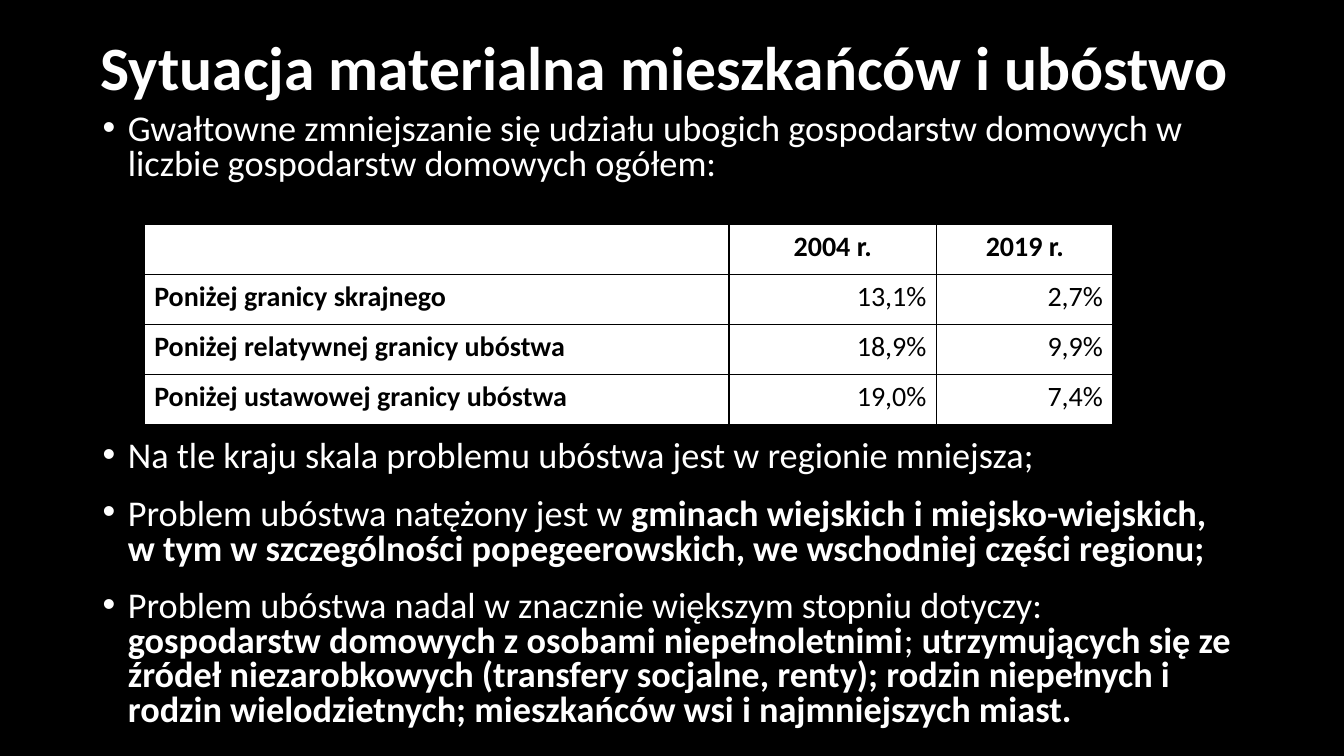
from collections import namedtuple

from lxml.etree import SubElement
from pptx import Presentation
from pptx.dml.color import RGBColor
from pptx.enum.text import MSO_ANCHOR, PP_ALIGN
from pptx.oxml.ns import qn
from pptx.util import Pt

Box = namedtuple("Box", "left top width height")

EMU_PER_PX = 9144
THEME = {
    "font": "Calibri",
    "dark": RGBColor(0, 0, 0),
    "light": RGBColor(255, 255, 255),
    "title_size": 44,
    "body_size": 25.9,
    "table_size": 20,
}
TITLE = "Sytuacja materialna mieszkańców i ubóstwo"
TABLE_GAP = 184
BULLETS = [
    ({"space_before": Pt(10)}, [
        ("Gwałtowne zmniejszanie się udziału ubogich gospodarstw domowych w "
         "liczbie gospodarstw domowych ogółem:", False),
    ]),
    ({"space_before": Pt(TABLE_GAP), "space_after": Pt(6)}, [
        ("Na tle kraju skala problemu ubóstwa jest w regionie mniejsza;", False),
    ]),
    ({"space_before": Pt(10), "space_after": Pt(6)}, [
        ("Problem ubóstwa natężony jest w", False),
        (" gminach wiejskich i miejsko-wiejskich, w tym w szczególności "
         "popegeerowskich, we wschodniej części regionu;", True),
    ]),
    ({"space_before": Pt(10), "space_after": Pt(6)}, [
        ("Problem ubóstwa nadal w znacznie większym stopniu dotyczy: ", False),
        ("gospodarstw domowych z osobami niepełnoletnimi", True),
        ("; ", False),
        ("utrzymujących się ze źródeł niezarobkowych (transfery socjalne, renty); "
         "rodzin niepełnych i rodzin wielodzietnych; "
         "mieszkańców wsi i najmniejszych miast.", True),
    ]),
]
COLUMN_WIDTHS = [580, 206, 175]
POVERTY_ROWS = [
    ["", "2004 r.", "2019 r."],
    ["Poniżej granicy skrajnego", "13,1%", "2,7%"],
    ["Poniżej relatywnej granicy ubóstwa", "18,9%", "9,9%"],
    ["Poniżej ustawowej granicy ubóstwa", "19,0%", "7,4%"],
]


def px(length):
    return length * EMU_PER_PX


def apply_format(target, values):
    for name, value in values.items():
        setattr(target, name, value)


def add_run(paragraph, text, size, color, bold):
    run = paragraph.add_run()
    run.text = text
    apply_format(run.font, {"name": THEME["font"], "size": Pt(size), "bold": bold})
    run.font.color.rgb = color


def add_text_frame(slide, box, anchor):
    frame = slide.shapes.add_textbox(*map(px, box)).text_frame
    apply_format(frame, {"word_wrap": True, "vertical_anchor": anchor})
    return frame


def add_title(slide, box):
    paragraph = add_text_frame(slide, box, MSO_ANCHOR.MIDDLE).paragraphs[0]
    paragraph.line_spacing = 0.9
    add_run(paragraph, TITLE, THEME["title_size"], THEME["light"], True)


def set_bullet(paragraph, indent):
    properties = paragraph._p.get_or_add_pPr()
    properties.set("marL", str(px(indent)))
    properties.set("indent", str(-px(indent)))
    SubElement(properties, qn("a:buFont")).set("typeface", "Arial")
    SubElement(properties, qn("a:buChar")).set("char", "•")


def add_bullets(slide, box):
    frame = add_text_frame(slide, box, MSO_ANCHOR.TOP)
    for index, (spacing, runs) in enumerate(BULLETS):
        paragraph = frame.add_paragraph() if index else frame.paragraphs[0]
        apply_format(paragraph, {"line_spacing": 0.8, **spacing})
        set_bullet(paragraph, 25)
        for text, bold in runs:
            add_run(paragraph, text, THEME["body_size"], THEME["light"], bold)


def set_borders(cell):
    properties = cell._tc.get_or_add_tcPr()
    for position, side in enumerate(("a:lnL", "a:lnR", "a:lnT", "a:lnB")):
        line = properties.makeelement(qn(side), {"w": str(Pt(1))})
        fill = SubElement(line, qn("a:solidFill"))
        SubElement(fill, qn("a:srgbClr")).set("val", str(THEME["dark"]))
        properties.insert(position, line)


def add_poverty_table(slide, box):
    table = slide.shapes.add_table(
        len(POVERTY_ROWS), len(COLUMN_WIDTHS), *map(px, box)).table
    for column, width in zip(table.columns, COLUMN_WIDTHS):
        column.width = px(width)
    for row_index, values in enumerate(POVERTY_ROWS):
        table.rows[row_index].height = px(box.height) // len(POVERTY_ROWS)
        for column_index, text in enumerate(values):
            cell = table.cell(row_index, column_index)
            cell.fill.solid()
            cell.fill.fore_color.rgb = THEME["light"]
            set_borders(cell)
            if not text:
                continue
            is_header = row_index == 0
            is_label = column_index == 0
            paragraph = cell.text_frame.paragraphs[0]
            paragraph.alignment = (
                PP_ALIGN.CENTER if is_header
                else PP_ALIGN.LEFT if is_label else PP_ALIGN.RIGHT)
            add_run(paragraph, text, THEME["table_size"], THEME["dark"],
                    is_header or is_label)


def build_poverty_slide(presentation, box):
    slide = presentation.slides.add_slide(presentation.slide_layouts[6])
    slide.background.fill.solid()
    slide.background.fill.fore_color.rgb = THEME["dark"]
    add_title(slide, Box(box.left + 90, box.top - 3, 1150, 145))
    add_bullets(slide, Box(box.left + 92, box.top + 108, 1150, 626))
    add_poverty_table(
        slide, Box(box.left + 143, box.top + 223, sum(COLUMN_WIDTHS), 198))


def main():
    presentation = Presentation()
    page = Box(0, 0, 1333, 750)
    apply_format(presentation, {
        "slide_width": px(page.width), "slide_height": px(page.height)})
    build_poverty_slide(presentation, page)
    presentation.save("out.pptx")


if __name__ == "__main__":
    main()
